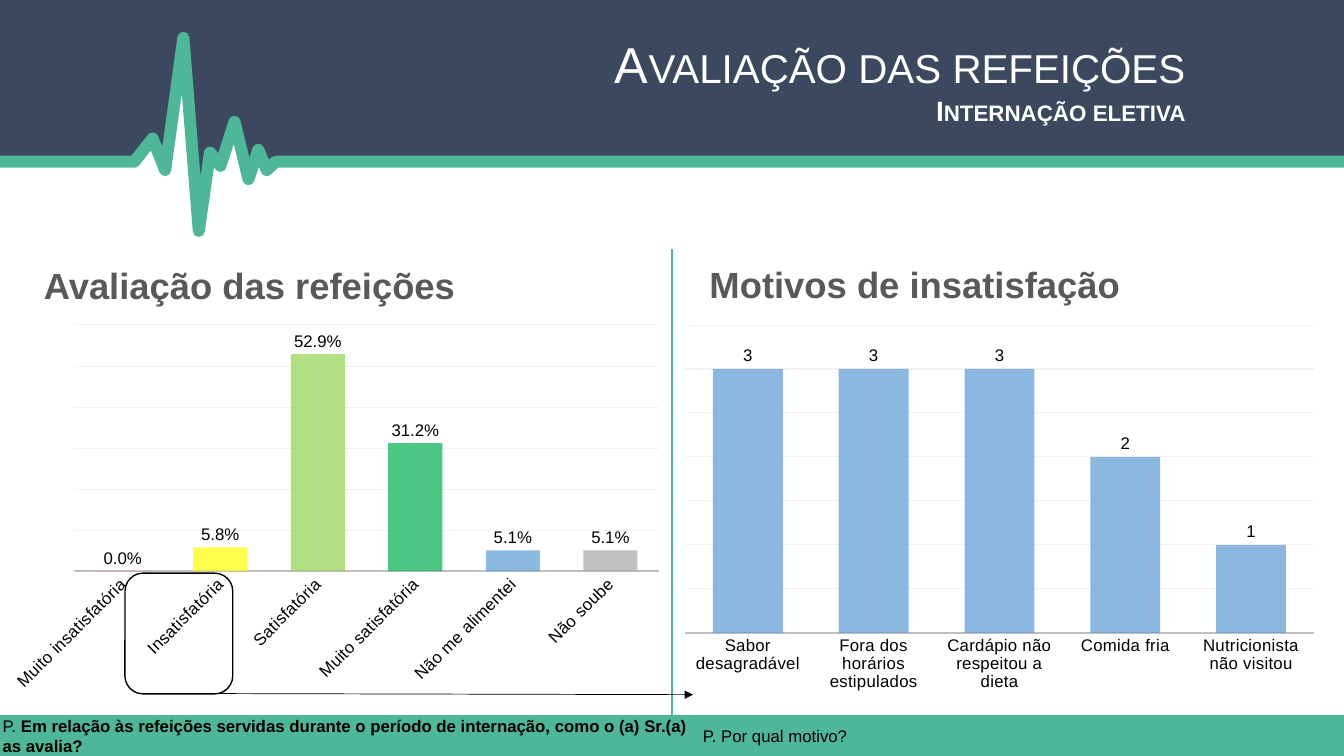
import pptx
import pptx.chart.data
import pptx.dml.color
import pptx.enum.chart
import pptx.enum.shapes
import pptx.enum.text
import pptx.oxml
import pptx.oxml.ns
import pptx.util

Pt = pptx.util.Pt
qn = pptx.oxml.ns.qn
SHAPE = pptx.enum.shapes.MSO_SHAPE
RIGHT = pptx.enum.text.PP_ALIGN.RIGHT

# Content
W, H = 960, 540
CHART_TOP, CHART_H = 226.8, 272.2
NAVY, GREEN, BLACK, WHITE, GRAY = "3B485D", "4EB798", "000000", "FFFFFF", "595959"
BLUE = "5B9BD5"
PULSE = [(0, 115.5), (96, 115.5), (109, 99), (118, 121.5), (131, 27), (142, 165),
         (150, 109), (157.5, 118.5), (167.5, 87), (177.5, 128), (184.5, 107),
         (190.5, 121.5), (197, 115.5), (W, 115.5)]
HEADER = [("Avaliação das refeições", 36, False), ("Internação eletiva", 20, True)]
# runs (text, bold), left, top, width, height, size, colour
LABELS = [
    ([("P. ", False), ("Em relação às refeições servidas durante o período de internação, "
                       "como o (a) Sr.(a) as avalia?", True)], -5.3, 507.6, 507.6, 22, 12, BLACK),
    ([("P. Por qual motivo?", False)], 495, 514.8, 335, 22, 12, BLACK),
    ([("Avaliação das refeições", True)], 24.2, 184.3, 433, 39, 26, GRAY),
    ([("Motivos de insatisfação", True)], 499.7, 183.6, 397, 39, 26, GRAY),
]
# plot is left, top, width and height inside the chart
RATINGS = dict(
    data=[("Muito insatisfatória", 0, "FF0000"), ("Insatisfatória", 0.058, "FFFF00"),
          ("Satisfatória", 0.529, "92D050"), ("Muito satisfatória", 0.312, "00B050"),
          ("Não me alimentei", 0.051, BLUE), ("Não soube", 0.051, "A6A6A6")],
    left=0, width=480, fmt="0.0%", top_value=0.6, step=0.1, angle=-45,
    plot=(52.9, 5.4, 418, 175.9))
REASONS = dict(
    data=[("Sabor desagradável", 3, BLUE), ("Fora dos horários estipulados", 3, BLUE),
          ("Cardápio não respeitou a dieta", 3, BLUE), ("Comida fria", 2, BLUE),
          ("Nutricionista não visitou", 1, BLUE)],
    left=480, width=468, fmt="0", top_value=3.5, step=0.5, angle=0,
    plot=(9.3, 5.4, 449.3, 219.9))


def rgb(color):
    return pptx.dml.color.RGBColor.from_string(color)


def paint(fill, color, alpha=None):
    fill.solid()
    fill.fore_color.rgb = rgb(color)
    if alpha:
        clr = fill._xPr.find(".//" + qn("a:srgbClr"))
        clr.append(pptx.oxml.parse_xml(
            f'<a:alpha {pptx.oxml.ns.nsdecls("a")} val="{alpha * 1000}"/>'))


def style(sp, fill=None, line=None, width=1):
    sp.shadow.inherit = False
    if fill:
        paint(sp.fill, fill)
    else:
        sp.fill.background()
    if line:
        sp.line.color.rgb = rgb(line)
        sp.line.width = Pt(width)
    else:
        sp.line.fill.background()


def outline(points, close):
    x, y = points[0]
    builder = s.shapes.build_freeform(Pt(x), Pt(y))
    builder.add_line_segments([(Pt(x), Pt(y)) for x, y in points[1:]], close=close)
    return builder.convert_to_shape()


def connect(x1, y1, x2, y2, color, width):
    line = s.shapes.add_connector(pptx.enum.shapes.MSO_CONNECTOR.STRAIGHT,
                                  Pt(x1), Pt(y1), Pt(x2), Pt(y2))
    line.line.color.rgb = rgb(color)
    line.line.width = Pt(width)
    line._element.spPr.append(pptx.oxml.parse_xml(
        f'<a:effectLst {pptx.oxml.ns.nsdecls("a")}/>'))
    return line


def set_font(font, size, color=BLACK, bold=False):
    font.name, font.size, font.bold = "Arial", Pt(size), bold
    font.color.rgb = rgb(color)


def write(p, text, size=12, color=BLACK, bold=False, small_caps=False):
    r = p.add_run()
    r.text = text
    set_font(r.font, size, color, bold)
    if small_caps:
        r.font._element.set("cap", "small")


def line_xml(line, tag, **attrs):
    ln = line._get_or_add_ln()
    extra = "".join(f' {k}="{v}"' for k, v in attrs.items())
    ln.append(pptx.oxml.parse_xml(f'<a:{tag} {pptx.oxml.ns.nsdecls("a")}{extra}/>'))


def add_columns(data, left, width, fmt, top_value, step, angle, plot):
    chart_data = pptx.chart.data.CategoryChartData(number_format=fmt)
    chart_data.categories = [name for name, _, _ in data]
    chart_data.add_series("Series 1", [value for _, value, _ in data])
    chart = s.shapes.add_chart(pptx.enum.chart.XL_CHART_TYPE.COLUMN_CLUSTERED, Pt(left),
                               Pt(CHART_TOP), Pt(width), Pt(CHART_H), chart_data).chart
    chart.has_title = chart.has_legend = False
    set_font(chart.font, 10)

    # Axes, with slightly spaced category names
    cat, val = chart.category_axis, chart.value_axis
    cat.major_tick_mark = pptx.enum.chart.XL_TICK_MARK.NONE
    cat.format.line.color.rgb = rgb("BFBFBF")
    cat.format.line.width = Pt(1.25)
    set_font(cat.tick_labels.font, 11.97)
    cat.tick_labels.font._element.set("spc", "20")
    cat._element.find(qn("c:txPr")).find(qn("a:bodyPr")).set("rot", str(angle * 60000))
    val.visible = False
    val.minimum_scale, val.maximum_scale, val.major_unit = 0, top_value, step
    val.major_gridlines.format.line.color.rgb = rgb("F2F2F2")
    val.major_gridlines.format.line.width = Pt(0.75)

    # Columns and value labels
    bars = chart.plots[0]
    bars.gap_width, bars.overlap, bars.vary_by_categories = 80, 25, False
    series = bars.series[0]
    paint(series.format.fill, BLUE, 70)
    for i, (_, _, color) in enumerate(data):
        if color != BLUE:
            paint(series.points[i].format.fill, color, 70)
    labels = series.data_labels
    labels.show_value = True
    labels.number_format, labels.number_format_is_linked = fmt, False
    labels.position = pptx.enum.chart.XL_LABEL_POSITION.OUTSIDE_END
    set_font(labels.font, 11.97)

    # Plot area
    area = chart._chartSpace.find(".//" + qn("c:plotArea"))
    for old in area.findall(qn("c:layout")):
        area.remove(old)
    sizes = "".join(f'<c:{k} val="{part / whole}"/>' for k, part, whole
                    in zip("xywh", plot, (width, CHART_H) * 2))
    area.insert(0, pptx.oxml.parse_xml(
        f'<c:layout {pptx.oxml.ns.nsdecls("c")}><c:manualLayout><c:layoutTarget val="inner"/>'
        f'<c:xMode val="edge"/><c:yMode val="edge"/>{sizes}</c:manualLayout></c:layout>'))


prs = pptx.Presentation()
prs.slide_width, prs.slide_height = Pt(W), Pt(H)
s = prs.slides.add_slide(prs.slide_layouts[5])

# Header band and pulse line
style(outline([(W, 0), (0, 0)] + PULSE, True), fill=NAVY)
pulse = outline(PULSE, False)
style(pulse, line=GREEN, width=8.6)
line_xml(pulse.line, "round")

add_columns(**RATINGS)

# Footer bar
style(s.shapes.add_shape(SHAPE.RECTANGLE, 0, Pt(510.8), Pt(W), Pt(29.2)), fill=GREEN)

# Title, brought in front of the band
title = s.shapes.title
title.left, title.top, title.width, title.height = Pt(177), Pt(20), Pt(677), Pt(75)
title._element.getparent().append(title._element)
tf = title.text_frame
tf.word_wrap = True
tf.auto_size = pptx.enum.text.MSO_AUTO_SIZE.NONE
tf.vertical_anchor = pptx.enum.text.MSO_ANCHOR.TOP
for i, (text, size, bold) in enumerate(HEADER):
    p = tf.add_paragraph() if i else tf.paragraphs[0]
    p.alignment = RIGHT
    p.space_before = Pt(0)
    write(p, text, size=size, color=WHITE, bold=bold, small_caps=True)

# Chart headings and survey questions
for runs, x, y, w, h, size, color in LABELS:
    tf = s.shapes.add_textbox(Pt(x), Pt(y), Pt(w), Pt(h)).text_frame
    tf.word_wrap = True
    for text, bold in runs:
        write(tf.paragraphs[0], text, size=size, color=color, bold=bold)

# Divider, highlighted category and arrow to its reasons
connect(480, 178, 480, 515, GREEN, 1)
style(s.shapes.add_shape(SHAPE.ROUNDED_RECTANGLE, Pt(89.3), Pt(409.4), Pt(77), Pt(86.2)),
      line=BLACK)
arrow = connect(147, 495.4, 495, 496.2, BLACK, 0.5)
line_xml(arrow.line, "tailEnd", type="triangle")

add_columns(**REASONS)

prs.save("out.pptx")
